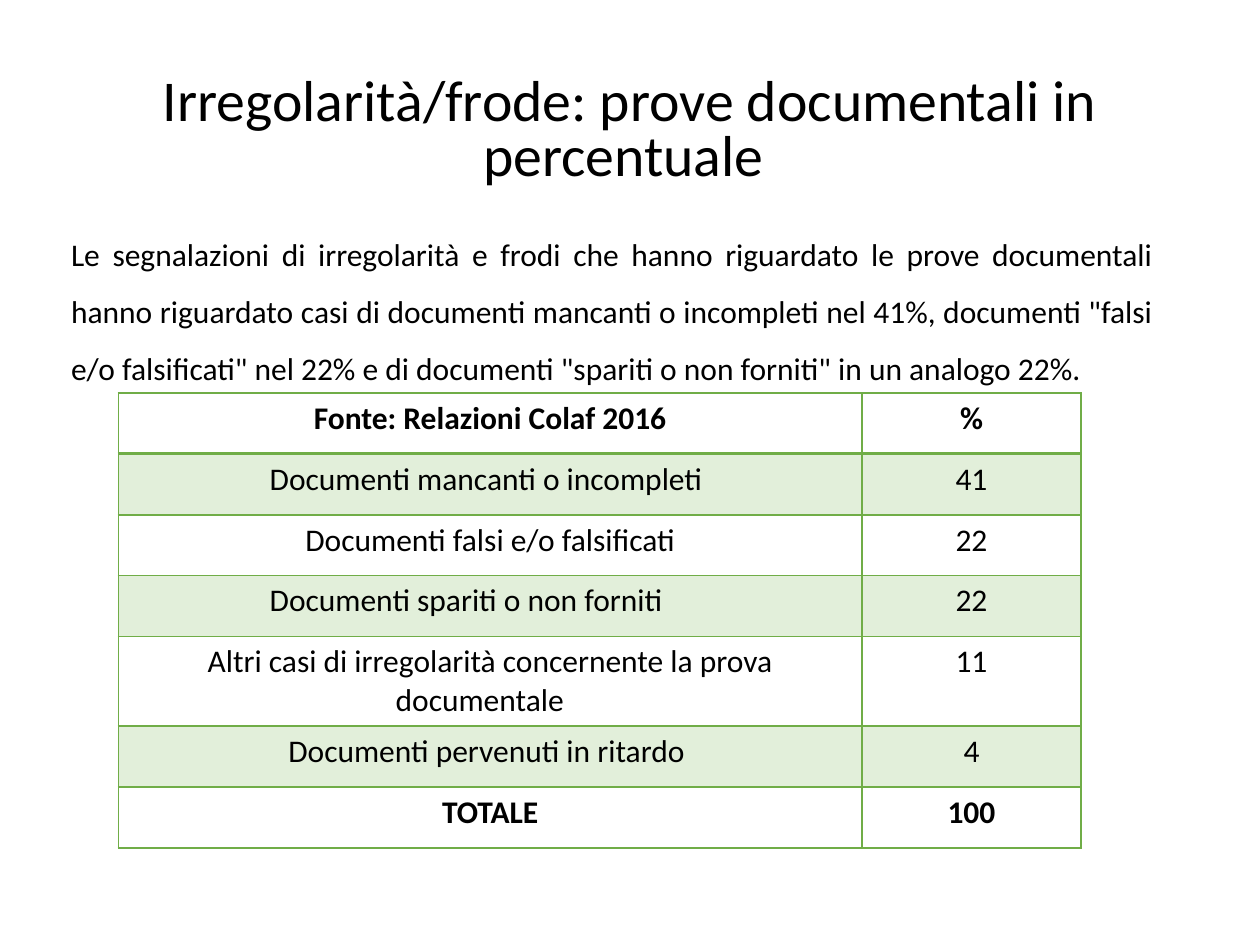
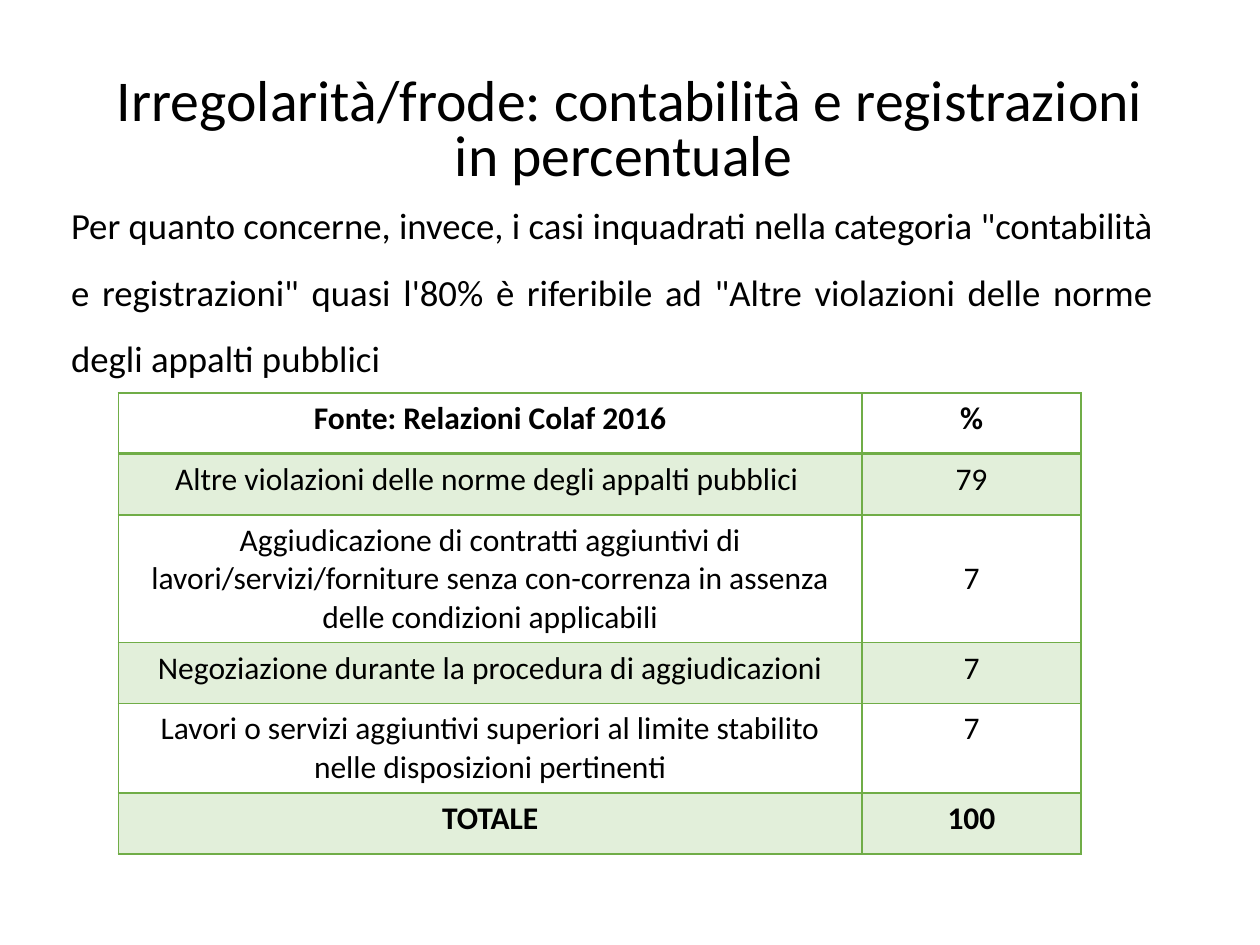
from lxml.etree import SubElement
from pptx import Presentation
from pptx.dml.color import RGBColor
from pptx.enum.text import MSO_ANCHOR, MSO_AUTO_SIZE, PP_ALIGN
from pptx.oxml.ns import qn
from pptx.util import Pt

BLACK, WHITE, GREEN, PALE_GREEN = "000000", "FFFFFF", "70AD47", "E2EFDA"
HEADER = ("Fonte: Relazioni Colaf 2016", "%")
TOTAL = ("TOTALE", "100")


def colour(value):
    return RGBColor.from_string(value)


def apply(target, **values):
    for name, value in values.items():
        setattr(target, name, value)


class SlideBuilder:
    font_name = "Calibri"
    column_widths = (424.8, 125.3)
    row_height = 34.8

    def __init__(self):
        self.deck = Presentation()
        apply(self.deck, slide_width=Pt(720), slide_height=Pt(540))
        self.page = None

    def add_span(self, para, text, size, bold=False):
        span = para.add_run()
        span.text = text
        apply(span.font, name=self.font_name, size=Pt(size), bold=bold)
        span.font.color.rgb = colour(BLACK)

    def new_page(self, title):
        self.page = self.deck.slides.add_slide(self.deck.slide_layouts[5])
        box = self.page.shapes.title
        apply(box, left=Pt(54), top=Pt(37.5), width=Pt(612), height=Pt(76.5))
        apply(box.text_frame, word_wrap=True, auto_size=MSO_AUTO_SIZE.NONE,
              vertical_anchor=MSO_ANCHOR.MIDDLE)
        para = box.text_frame.paragraphs[0]
        apply(para, alignment=PP_ALIGN.CENTER, line_spacing=0.8)
        self.add_span(para, title, 33)

    def add_body(self, text, top, size):
        box = self.page.shapes.add_textbox(Pt(20), Pt(top), Pt(646), Pt(356))
        apply(box.text_frame, word_wrap=True, auto_size=MSO_AUTO_SIZE.NONE)
        para = box.text_frame.paragraphs[0]
        apply(para, alignment=PP_ALIGN.JUSTIFY, line_spacing=1.5)
        # Hanging indent, reached by the opening tab
        properties = para._p.get_or_add_pPr()
        properties.set("marL", str(Pt(13.5)))
        properties.set("indent", str(Pt(-13.5)))
        self.add_span(para, "\t", 20)
        self.add_span(para, text, size)

    def add_borders(self, cell, **widths):
        properties = cell._tc.get_or_add_tcPr()
        for side in "LRTB":
            line = SubElement(properties, qn(f"a:ln{side}"), w=str(Pt(widths.get(side, 1))))
            fill = SubElement(line, qn("a:solidFill"))
            SubElement(fill, qn("a:srgbClr"), val=GREEN)

    def add_table(self, findings, centred_row=None):
        rows = [HEADER, *findings, TOTAL]
        frame = self.page.shapes.add_table(
            len(rows), len(HEADER), Pt(67.7), Pt(224.6),
            Pt(sum(self.column_widths)), Pt(self.row_height * len(rows)))
        table = frame.table
        for column, width in zip(table.columns, self.column_widths):
            column.width = Pt(width)
        for row_index, texts in enumerate(rows):
            table.rows[row_index].height = Pt(self.row_height)
            for column_index, text in enumerate(texts):
                cell = table.cell(row_index, column_index)
                # A heavier rule parts the header from the findings
                self.add_borders(cell, T=2 if row_index == 1 else 1,
                                 B=2 if row_index == 0 else 1)
                cell.fill.solid()
                cell.fill.fore_color.rgb = colour(PALE_GREEN if row_index % 2 else WHITE)
                if row_index == centred_row:
                    cell.vertical_anchor = MSO_ANCHOR.MIDDLE
                para = cell.text_frame.paragraphs[0]
                para.alignment = PP_ALIGN.CENTER
                self.add_span(para, text, 18, bold=texts in (HEADER, TOTAL))


def main():
    builder = SlideBuilder()

    # Documentary evidence
    builder.new_page("Irregolarità/frode: prove documentali in percentuale ")
    builder.add_body(
        "Le segnalazioni di irregolarità e frodi che hanno riguardato le prove documentali "
        "hanno riguardato casi di documenti mancanti o incompleti nel 41%, documenti "
        '"falsi e/o falsificati" nel 22% e di documenti "spariti o non forniti" '
        "in un analogo 22%.", top=116.6, size=18)
    builder.add_table([
        ("Documenti mancanti o incompleti \t", "41"),
        ("Documenti falsi e/o falsificati", "22"),
        ("Documenti spariti o non forniti \t", "22"),
        ("Altri casi di irregolarità concernente la prova documentale \t", "11"),
        ("Documenti pervenuti in ritardo ", "4"),
    ])

    # Accounting and records
    builder.new_page("Irregolarità/frode: contabilità e registrazioni in percentuale ")
    builder.add_body(
        'Per quanto concerne, invece, i casi inquadrati nella categoria "contabilità e '
        "registrazioni\" quasi l'80% è riferibile ad \"Altre violazioni delle norme "
        "degli appalti pubblici ", top=100, size=21)
    builder.add_table([
        ("Altre violazioni delle norme degli appalti pubblici\t", "79"),
        ("Aggiudicazione di contratti aggiuntivi di lavori/servizi/forniture senza "
         "con-correnza in assenza delle condizioni applicabili", "7"),
        ("Negoziazione durante la procedura di aggiudicazioni", "7"),
        ("Lavori o servizi aggiuntivi superiori al limite stabilito nelle "
         "disposizioni pertinenti", "7"),
    ], centred_row=2)

    builder.deck.save("out.pptx")


if __name__ == "__main__":
    main()
